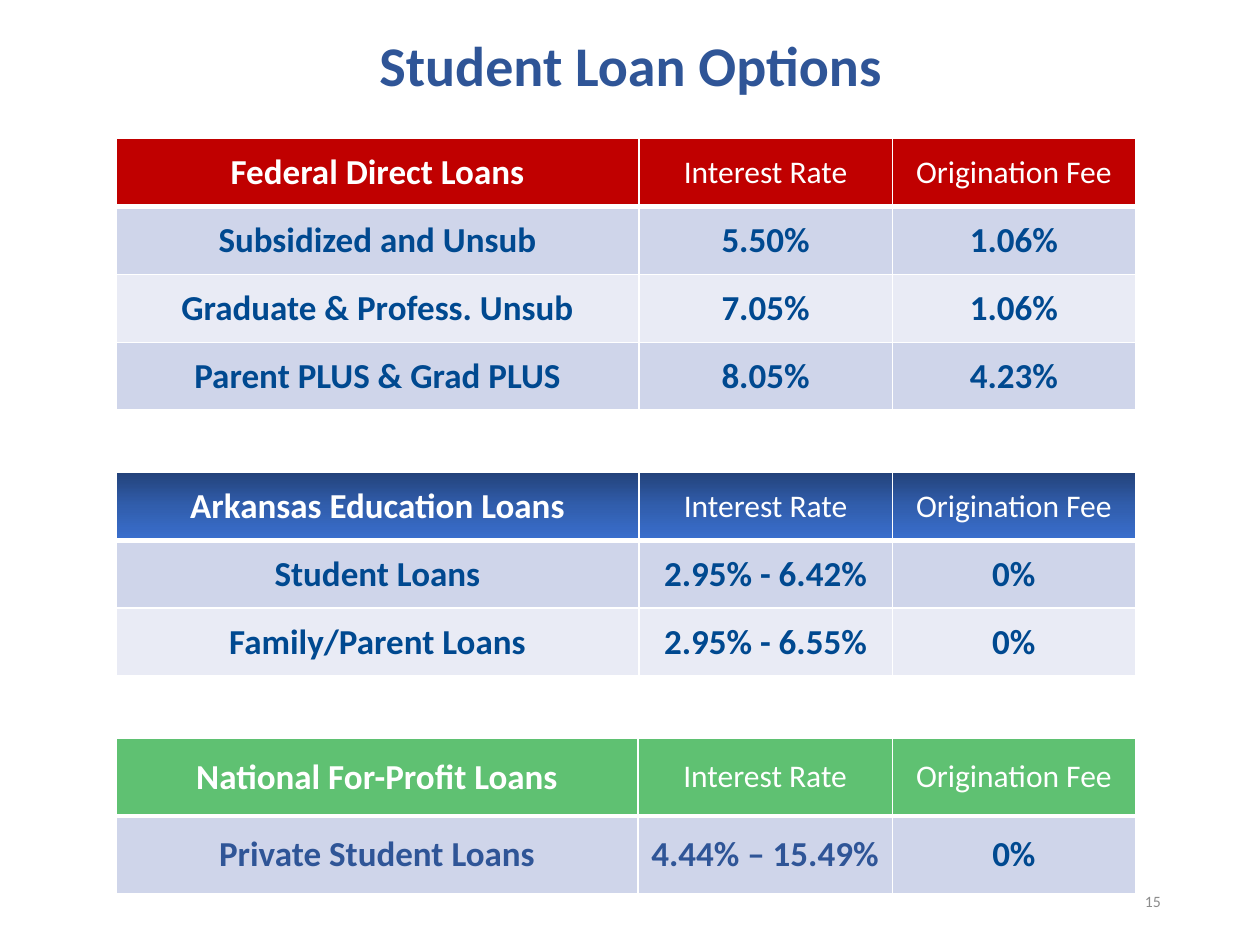
from dataclasses import dataclass

from lxml import etree
from pptx import Presentation
from pptx import util as u
from pptx.dml.color import RGBColor
from pptx.enum import text
from pptx.oxml import ns

COLORS = {
    "white": "FFFFFF",
    "title": "2F5597",
    "body": "004990",
    "number": "8C8C8C",
    "federal": "C00000",
    "state_dark": "23427A",
    "state_mid": "315EAD",
    "state_light": "3A6FCE",
    "private": "5FC172",
    "band_dark": "CFD5EA",
    "band_light": "E9EBF5",
}
FONT = "Calibri"
LEFT = 2.34


@dataclass
class Style:
    size: float
    color: str
    bold: bool = True


@dataclass
class LoanTable:
    top: float
    row_height: float
    widths: tuple[float, ...]
    header_fill: tuple[str, ...]
    name: str
    rows: list[tuple[str, str, str]]
    accent: str = "body"


NAME_STYLE = Style(20, "white")
HEADING_STYLE = Style(18, "white", False)
WIDTHS = (10.54, 5.11, 4.9)
LOAN_TABLES = [
    LoanTable(2.79, 1.37, WIDTHS, ("federal",), "Federal Direct Loans", [
        ("Subsidized and Unsub", "5.50%", "1.06%"),
        ("Graduate & Profess. Unsub", "7.05%", "1.06%"),
        ("Parent PLUS & Grad PLUS", "8.05%", "4.23%"),
    ]),
    LoanTable(9.52, 1.37, WIDTHS, ("state_dark", "state_mid", "state_light"),
              "Arkansas Education Loans", [
        ("Student Loans", "2.95% - 6.42%", "0%"),
        ("Family/Parent Loans", "2.95% - 6.55%", "0%"),
    ]),
    LoanTable(14.88, 1.57, (10.52, 5.13, 4.9), ("private",), "National For-Profit Loans", [
        ("Private Student Loans", "4.44% – 15.49%", "0%"),
    ], "title"),
]


def write(frame, words: str, style: Style, align) -> None:
    """Put one styled, vertically centred paragraph into a text frame."""
    frame.text = words
    frame.word_wrap = True
    frame.vertical_anchor = text.MSO_ANCHOR.MIDDLE
    para = frame.paragraphs[0]
    para.alignment = align
    font = para.runs[0].font
    font.name, font.size, font.bold = FONT, u.Pt(style.size), style.bold
    font.color.rgb = RGBColor.from_string(COLORS[style.color])


def add_text(page, place: tuple[float, ...], words: str, style: Style, align):
    """Add a text box at a place given in centimetres."""
    box = page.shapes.add_textbox(*map(u.Cm, place))
    write(box.text_frame, words, style, align)
    return box


def add_solid(parent, color: str) -> None:
    """Append a solid fill element."""
    solid = etree.SubElement(parent, ns.qn("a:solidFill"))
    etree.SubElement(solid, ns.qn("a:srgbClr"), val=COLORS[color])


def set_borders(cell, widths: dict[str, int]) -> None:
    """Draw white cell borders, with widths in points by side."""
    properties = cell._tc.get_or_add_tcPr()
    for side, width in widths.items():
        line = etree.SubElement(properties, ns.qn(f"a:ln{side}"), w=str(u.Pt(width)))
        add_solid(line, "white")


def set_fill(cell, colors: tuple[str, ...]) -> None:
    """Fill a cell with one colour, or with an even downward gradient of several."""
    if len(colors) == 1:
        cell.fill.solid()
        cell.fill.fore_color.rgb = RGBColor.from_string(COLORS[colors[0]])
        return
    gradient = etree.SubElement(cell._tc.get_or_add_tcPr(), ns.qn("a:gradFill"))
    stops = etree.SubElement(gradient, ns.qn("a:gsLst"))
    for index, color in enumerate(colors):
        position = 100000 * index // (len(colors) - 1)
        stop = etree.SubElement(stops, ns.qn("a:gs"), pos=str(position))
        etree.SubElement(stop, ns.qn("a:srgbClr"), val=COLORS[color])
    etree.SubElement(gradient, ns.qn("a:lin"), ang="5400000", scaled="0")


def add_loan_table(page, loans: LoanTable) -> None:
    """Add a table with a coloured header and banded rows."""
    rows = [(loans.name, "Interest Rate", "Origination Fee"), *loans.rows]
    place = (LEFT, loans.top, sum(loans.widths), loans.row_height * len(rows))
    table = page.shapes.add_table(len(rows), len(loans.widths), *map(u.Cm, place)).table
    for column, width in zip(table.columns, loans.widths):
        column.width = u.Cm(width)
    for r, row in enumerate(rows):
        table.rows[r].height = u.Cm(loans.row_height)
        for c, words in enumerate(row):
            cell = table.cell(r, c)
            if r == 0:
                style = HEADING_STYLE if c else NAME_STYLE
                fill = loans.header_fill
            else:
                style = Style(20, "body" if c == 2 else loans.accent)
                fill = ("band_dark" if r % 2 else "band_light",)
            write(cell.text_frame, words, style, text.PP_ALIGN.CENTER)
            cell.vertical_anchor = text.MSO_ANCHOR.MIDDLE
            cell.margin_left = cell.margin_right = u.Cm(0.2)
            set_borders(cell, {"L": 1, "R": 1, "T": 3 if r == 1 else 1, "B": 1 if r else 3})
            set_fill(cell, fill)


def main() -> None:
    """Build the loan options slide."""
    deck = Presentation()
    deck.slide_width, deck.slide_height = u.Cm(25.4), u.Cm(19.05)
    page = deck.slides.add_slide(deck.slide_layouts[6])
    title = add_text(page, (4.5, 0.66, 16.43, 1.42), "Student Loan Options",
                     Style(32, "title"), text.PP_ALIGN.CENTER)
    title.text_frame.paragraphs[0].line_spacing = 0.9
    add_text(page, (17.93, 17.65, 5.72, 1.02), "15",
             Style(9, "number", False), text.PP_ALIGN.RIGHT)
    for loans in LOAN_TABLES:
        add_loan_table(page, loans)
    deck.save("out.pptx")


if __name__ == "__main__":
    main()
